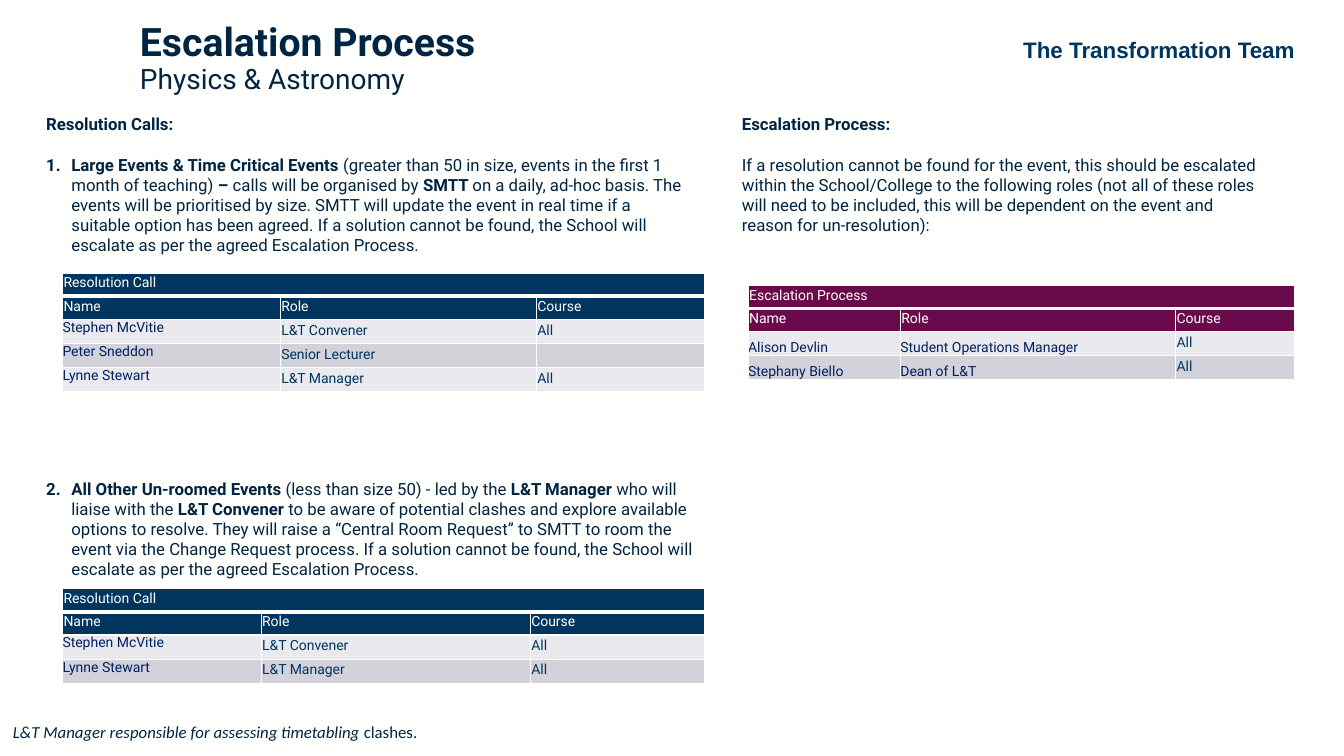
from lxml import etree
from pptx import Presentation
from pptx.dml.color import RGBColor
from pptx.enum.text import MSO_ANCHOR, PP_ALIGN
from pptx.oxml.ns import qn
from pptx.util import Inches, Pt

TOP, MIDDLE, BOTTOM = MSO_ANCHOR.TOP, MSO_ANCHOR.MIDDLE, MSO_ANCHOR.BOTTOM
CENTER = PP_ALIGN.CENTER

COLORS = {
    "paper": "FFFFFE", "ink": "002542", "navy": "00355F", "name": "002060",
    "plum": "6A094B", "light": "EAE9EE", "dark": "D3D1DA",
}
HEADER_HEIGHT, ROW_HEIGHT = 0.23, 0.24
LINE = 14.5  # points taken by one line of body text


def rgb(key):
    return RGBColor.from_string(COLORS[key])


def set_font(font, size, color, name="Roboto"):
    font.size, font.name = Pt(size), name
    font.color.rgb = rgb(color)


def add_box(slide, box, anchor=TOP):
    frame = slide.shapes.add_textbox(*map(Inches, box)).text_frame
    frame.word_wrap = True
    frame.vertical_anchor = anchor
    return frame


def add_runs(paragraph, runs):
    """Add (text, bold) runs."""
    for text, bold in runs:
        run = paragraph.add_run()
        run.text = text
        run.font.bold = bold


def number(paragraph):
    props = paragraph._p.get_or_add_pPr()
    props.set("marL", str(Inches(0.25)))
    props.set("indent", str(Inches(-0.25)))
    etree.SubElement(props, qn("a:buFont"), typeface="+mj-lt")
    etree.SubElement(props, qn("a:buAutoNum"), type="arabicPeriod")


def add_team(slide, box):
    team = add_box(slide, box).paragraphs[0]
    team.text = "The Transformation Team"
    team.alignment = CENTER
    set_font(team.font, 16, "navy", "Arial")
    team.font.bold = True


def add_title(slide, box):
    title = add_box(slide, box, MIDDLE).paragraphs[0]
    title.line_spacing = 0.9
    set_font(title.font, 28, "ink")
    add_runs(title, [("Escalation Process", True)])
    title.add_line_break()
    add_runs(title, [("Physics & Astronomy", False)])
    title.runs[1].font.size = Pt(20)


def add_body(slide, box, heading, items, numbered=False):
    """Place a bold heading and (blank lines before, runs) items."""
    frame = add_box(slide, box)
    for index, (gap, runs) in enumerate([(0, [(heading, True)]), *items]):
        paragraph = frame.add_paragraph() if index else frame.paragraphs[0]
        if gap:
            paragraph.space_before = Pt(gap * LINE)
        if numbered and index:
            number(paragraph)
        set_font(paragraph.font, 12, "ink")
        add_runs(paragraph, runs)


def set_borders(cell, bottom=1):
    props = cell._tc.get_or_add_tcPr()
    for side, width in (("L", 1), ("R", 1), ("T", 1), ("B", bottom)):
        line = etree.SubElement(props, qn(f"a:ln{side}"), w=str(Pt(width)))
        fill = etree.SubElement(line, qn("a:solidFill"))
        etree.SubElement(fill, qn("a:srgbClr"), val=COLORS["paper"])


def fill_cell(cell, text, fill, color, flush=False, anchor=BOTTOM, bottom=1):
    """Fill one cell; a flush cell has no margins."""
    side = Inches(0 if flush else 0.01)
    cell.margin_left = cell.margin_right = cell.margin_top = side
    cell.margin_bottom = Inches(0 if flush else 0.05)
    cell.vertical_anchor = anchor
    set_borders(cell, bottom)
    cell.fill.solid()
    cell.fill.fore_color.rgb = rgb(fill)
    paragraph = cell.text_frame.paragraphs[0]
    set_font(paragraph.font, 10, color)
    if text:
        paragraph.add_run().text = text
    else:
        etree.SubElement(paragraph._p, qn("a:endParaRPr"), sz="1000")
    if color == "navy":
        paragraph.line_spacing = 1.07


def add_roles(slide, left, top, widths, title, accent, people,
              flush_columns=1, name_anchor=TOP):
    count = len(people) + 2
    height = 2 * HEADER_HEIGHT + len(people) * ROW_HEIGHT
    box = map(Inches, (left, top, sum(widths), height))
    table = slide.shapes.add_table(count, len(widths), *box).table
    table.first_row = table.horz_banding = False
    for column, width in zip(table.columns, widths):
        column.width = Inches(width)
    for index, row in enumerate(table.rows):
        row.height = Inches(HEADER_HEIGHT if index < 2 else ROW_HEIGHT)

    table.cell(0, 0).merge(table.cell(0, len(widths) - 1))
    headers = [(title, "", ""), ("Name", "Role", "Course")]
    for r, texts in enumerate(headers):
        for c, text in enumerate(texts):
            fill_cell(table.cell(r, c), text, accent, "paper",
                      bottom=1 if r else 3)
    for r, person in enumerate(people):
        for c, text in enumerate(person):
            flush = c < flush_columns
            fill_cell(table.cell(r + 2, c), text, ("light", "dark")[r % 2],
                      "name" if flush else "navy", flush,
                      name_anchor if flush else BOTTOM)


def add_footnote(slide, box):
    note = add_box(slide, box).paragraphs[0]
    set_font(note.font, 12, "ink", "Calibri")
    add_runs(note, [("L&T Manager responsible for assessing timetabling ", False),
                    ("clashes.", False)])
    note.runs[0].font.italic = True


LARGE_EVENTS = [
    ("Large Events & Time Critical Events ", True),
    ("(greater than 50 in size, events in the first 1 month of teaching) ", False),
    ("– ", True), ("calls will be organised by ", False), ("SMTT ", True),
    ("on a daily, ad-hoc basis. The events will be prioritised by size. SMTT "
     "will update the event in real time if a suitable option has been agreed. "
     "If a solution cannot be found, the School will escalate as per the agreed "
     "Escalation Process.", False),
]
OTHER_EVENTS = [
    ("All Other Un-roomed Events ", True),
    ("(less than size 50) - led by the ", False), ("L&T Manager ", True),
    ("who will liaise with the ", False), ("L&T Convener ", True),
    ("to be aware of potential clashes and explore available options to resolve. "
     "They will raise a “Central Room Request” to SMTT to room the event via the "
     "Change Request process. If a solution cannot be found, the School will "
     "escalate as per the agreed Escalation Process.", False),
]
ESCALATION = [
    ("If a resolution cannot be found for the event, this should be escalated "
     "within the School/College to the following roles (not all of these roles "
     "will need to be included, this will be dependent on the event and reason "
     "for un-resolution):", False),
]
CONVENER = ("Stephen McVitie", "L&T Convener", "All")
LECTURER = ("Peter Sneddon", "Senior Lecturer", "")
MANAGER = ("Lynne Stewart", "L&T Manager", "All")
ESCALATION_ROLES = [("Alison Devlin", "Student Operations Manager", "All"),
                    ("Stephany Biello", "Dean of L&T", "All")]


def main():
    deck = Presentation()
    deck.slide_width, deck.slide_height = Inches(13.33), Inches(7.5)
    slide = deck.slides.add_slide(deck.slide_layouts[6])
    slide.background.fill.solid()
    slide.background.fill.fore_color.rgb = rgb("paper")

    add_team(slide, (9.95, 0.31, 3.09, 0.37))
    add_title(slide, (1.29, 0, 4.23, 1.17))
    add_body(slide, (0.36, 1.08, 6.63, 4.75), "Resolution Calls:",
             [(1, LARGE_EVENTS), (11, OTHER_EVENTS)], numbered=True)
    add_body(slide, (7.26, 1.08, 5.42, 1.51), "Escalation Process:",
             [(1, ESCALATION)])
    add_roles(slide, 0.62, 2.71, (2.16, 2.54, 1.67), "Resolution Call", "navy",
              [CONVENER, LECTURER, MANAGER])
    add_roles(slide, 0.62, 5.84, (1.97, 2.67, 1.73), "Resolution Call", "navy",
              [CONVENER, MANAGER])
    add_roles(slide, 7.42, 2.83, (1.51, 2.73, 1.18), "Escalation Process", "plum",
              ESCALATION_ROLES, flush_columns=2, name_anchor=BOTTOM)
    add_footnote(slide, (0.03, 7.11, 8.17, 0.3))
    deck.save("out.pptx")


if __name__ == "__main__":
    main()
